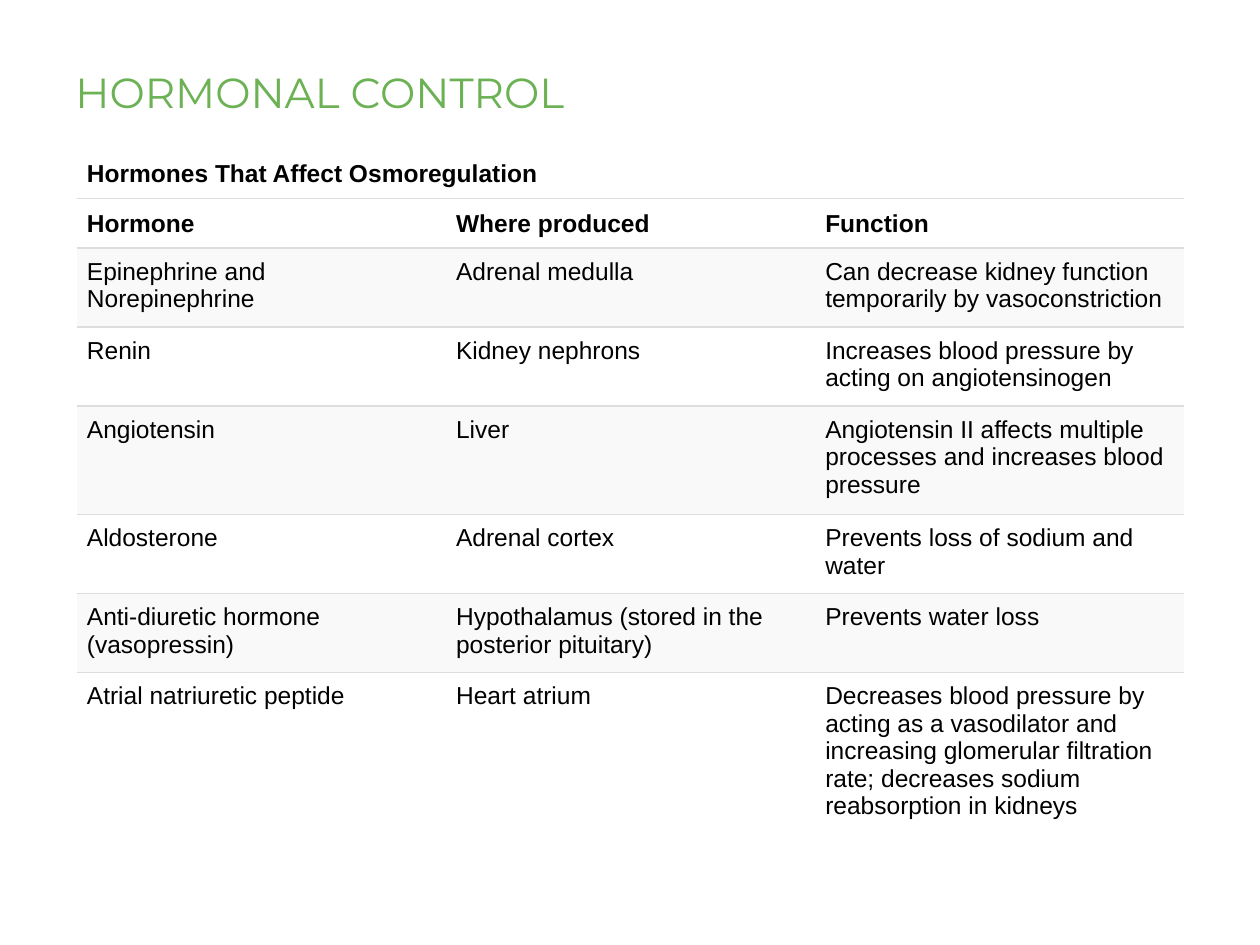
from lxml.etree import SubElement
from pptx import Presentation
from pptx.dml.color import RGBColor
from pptx.enum.text import MSO_ANCHOR as Anchor
from pptx.oxml.ns import qn
from pptx.util import Inches, Pt

GREEN, BLACK, STRIPE, RULE = "6CB255", "000000", "F9F9F9", "DDDDDD"
HEADER_ROWS = 2
COLUMN_WIDTH = 2.93
ROW_HEIGHTS = [0.39, 0.39, 0.62, 0.62, 0.84, 0.39, 0.62, 1.07]
HORMONES = [
    ("Hormones That Affect Osmoregulation", "", ""),
    ("Hormone", "Where produced", "Function"),
    ("Epinephrine and Norepinephrine", "Adrenal medulla",
     "Can decrease kidney function temporarily by vasoconstriction"),
    ("Renin", "Kidney nephrons",
     "Increases blood pressure by acting on angiotensinogen"),
    ("Angiotensin", "Liver",
     "Angiotensin II affects multiple processes and increases blood pressure"),
    ("Aldosterone", "Adrenal cortex", "Prevents loss of sodium and water"),
    ("Anti-diuretic hormone (vasopressin)",
     "Hypothalamus (stored in the posterior pituitary)", "Prevents water loss"),
    ("Atrial natriuretic peptide", "Heart atrium",
     "Decreases blood pressure by acting as a vasodilator and increasing "
     "glomerular filtration rate; decreases sodium reabsorption in kidneys"),
]


def color(hex_value):
    return RGBColor.from_string(hex_value)


def set_font(paragraph, name, size, hex_value, bold=False):
    font = paragraph.font
    font.name, font.size, font.bold = name, Pt(size), bold
    font.color.rgb = color(hex_value)


def add_title(slide, text):
    title = slide.shapes.add_textbox(
        Inches(0.5), Inches(0.26), Inches(8.82), Inches(0.72))
    frame = title.text_frame
    frame.word_wrap = True
    frame.vertical_anchor = Anchor.BOTTOM
    frame.text = text
    set_font(frame.paragraphs[0], "Montserrat", 24, GREEN)


def set_borders(cell, ruled_sides):
    """Rule the given sides and clear the others; call before filling."""
    properties = cell._tc.get_or_add_tcPr()
    for side in "LRTB":
        line = SubElement(properties, qn(f"a:ln{side}"), w=str(Pt(1)))
        if side in ruled_sides:
            fill = SubElement(line, qn("a:solidFill"))
            SubElement(fill, qn("a:srgbClr"), val=RULE)
        else:
            SubElement(line, qn("a:noFill"))


def format_cell(cell, text, row, last_row):
    is_header = row < HEADER_ROWS
    cell.margin_left = cell.margin_right = Inches(0.08)
    cell.margin_top = cell.margin_bottom = Inches(0.08)
    cell.vertical_anchor = Anchor.BOTTOM if is_header else Anchor.TOP
    cell.text = text
    set_font(cell.text_frame.paragraphs[0], "Arial", 14, BLACK, is_header)

    # Rules run between rows only
    set_borders(cell, ("T" if row > 0 else "") + ("B" if row < last_row else ""))

    # Every other body row is striped
    if not is_header and row % 2 == 0:
        cell.fill.solid()
        cell.fill.fore_color.rgb = color(STRIPE)
    else:
        cell.fill.background()


def add_hormone_table(slide):
    column_count = len(HORMONES[0])
    table = slide.shapes.add_table(
        len(HORMONES), column_count, Inches(0.61), Inches(1.18),
        Inches(COLUMN_WIDTH * column_count), Inches(sum(ROW_HEIGHTS))).table
    table.first_row = table.horz_banding = False
    for column in table.columns:
        column.width = Inches(COLUMN_WIDTH)
    for row, (height, texts) in enumerate(zip(ROW_HEIGHTS, HORMONES)):
        table.rows[row].height = Inches(height)
        for column, text in enumerate(texts):
            format_cell(table.cell(row, column), text, row, len(HORMONES) - 1)

    # The caption spans the whole first row
    table.cell(0, 0).merge(table.cell(0, column_count - 1))


def main():
    presentation = Presentation()
    presentation.slide_width, presentation.slide_height = Inches(10), Inches(7.5)
    slide = presentation.slides.add_slide(presentation.slide_layouts[6])
    add_title(slide, "HORMONAL CONTROL")
    add_hormone_table(slide)
    presentation.save("out.pptx")


if __name__ == "__main__":
    main()
